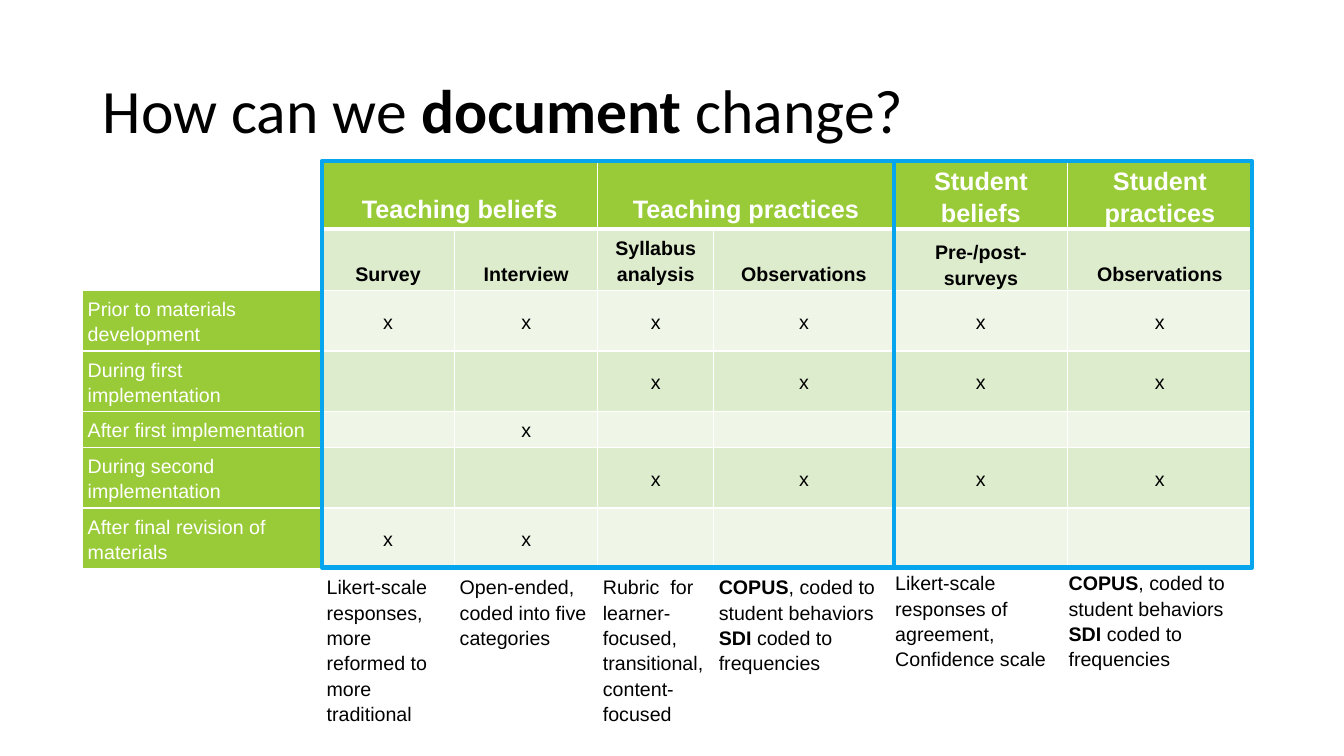
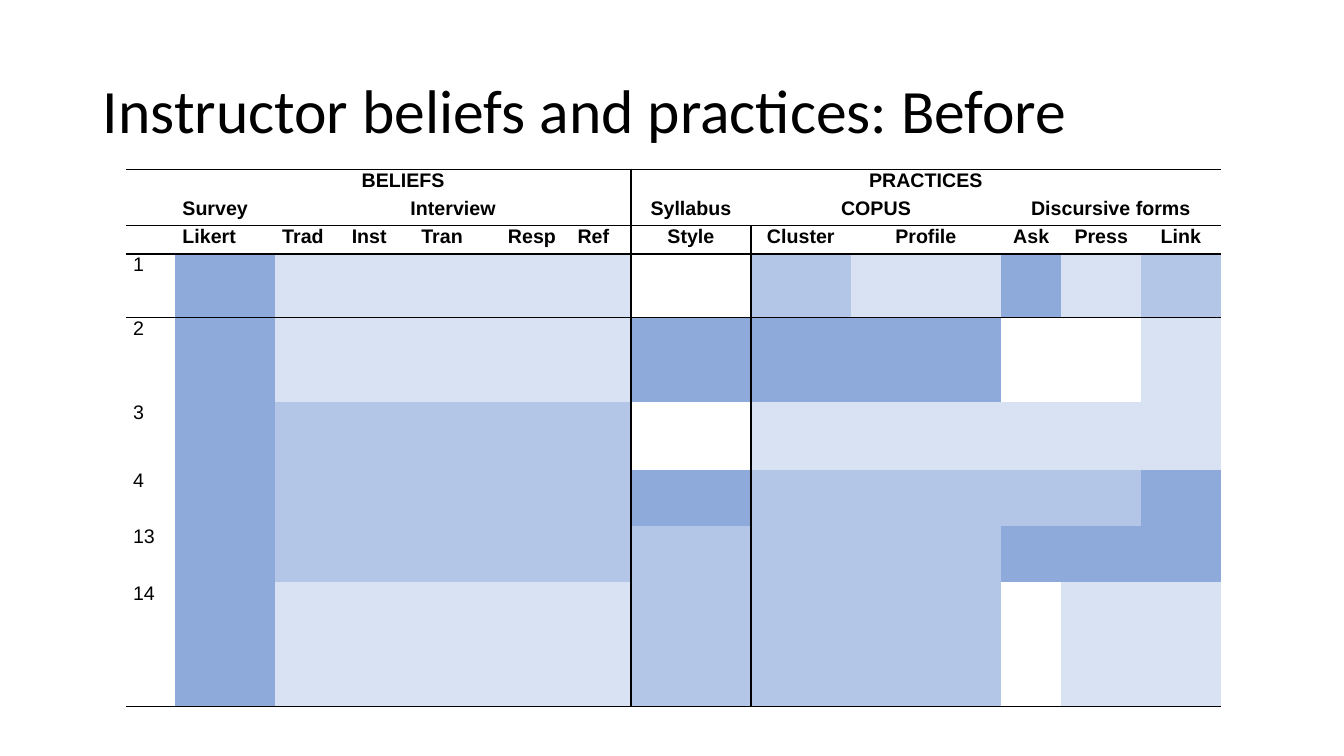
from dataclasses import dataclass, field

from lxml import etree
from pptx import Presentation
from pptx import util as u
from pptx.dml.color import RGBColor
from pptx.enum import shapes, text
from pptx.oxml.ns import qn

WIDTH, HEIGHT = 13.33, 7.5
COLORS = {
    "black": "000000", "white": "FFFFFF", "green": "99CB38", "sage": "DEECCE",
    "mint": "EFF6E8", "outline": "08A5EF", "D": "8EAADB", "M": "B4C6E7", "L": "D9E2F3",
}
NO_STYLE = "{2D5ABB26-0587-4C30-8999-92F81FD0307C}"
LEFT, CENTER = text.PP_ALIGN.LEFT, text.PP_ALIGN.CENTER
TOP, MIDDLE, BOTTOM = text.MSO_ANCHOR.TOP, text.MSO_ANCHOR.MIDDLE, text.MSO_ANCHOR.BOTTOM


@dataclass(frozen=True)
class Grid:
    left: float
    top: float
    cols: tuple[float, ...]
    rows: tuple[float, ...]

    def box(self, c0: int, c1: int, r0: int, r1: int) -> list[u.Emu]:
        lengths = (self.left + sum(self.cols[:c0]), self.top + sum(self.rows[:r0]),
                   sum(self.cols[c0:c1]), sum(self.rows[r0:r1]))
        return [u.Inches(v) for v in lengths]


@dataclass(frozen=True)
class Cell:
    content: str = ""
    fill: str | None = None
    color: str = "black"
    size: int = 14
    bold: bool = False
    align: text.PP_ALIGN = CENTER
    anchor: text.MSO_ANCHOR = TOP
    inset: tuple[float, float] = (0.07, 0)
    spacing: float = 1.0
    span: int = 1
    edge: str = "black"
    edges: dict[str, float] = field(default_factory=dict)


DOCUMENT_GRID = Grid(0.82, 1.6, (2.37, 1.32, 1.42, 1.15, 1.79, 1.72, 1.83),
                     (0.67, 0.61, 0.6, 0.6, 0.35, 0.6, 0.6, 1.74))
CODED = "**COPUS**, coded to student behaviors\n**SDI** coded to frequencies"
DOCUMENT_TEXT = [
    ["", "Teaching beliefs", "", "Teaching practices", "", "Student beliefs", "Student practices"],
    ["", "Survey", "Interview", "Syllabus analysis", "Observations", "Pre-/post- surveys",
     "Observations"],
    ["Prior to materials development", *"xxxxxx"],
    ["During first implementation", "", "", *"xxxx"],
    ["After first implementation", "", "x", "", "", "", ""],
    ["During second implementation", "", "", *"xxxx"],
    ["After final revision of materials", "x", "x", "", "", "", ""],
    ["", "Likert-scale responses, more reformed to more traditional",
     "Open-ended, coded into five categories",
     "Rubric  for learner-focused, transitional, content-focused", CODED,
     "Likert-scale responses of agreement,\nConfidence scale", CODED],
]

BEFORE_GRID = Grid(1.25, 1.68, (0.49, 0.99, 0.69, 0.69, 0.17, 0.69, 0.69, 0.6,
                                1.19, 0.99, 1.49, 0.6, 0.79, 0.79),
                   (0.28, 0.28, 0.28, 0.63, 0.84, 0.67, 0.56, 0.56, 1.23))
BEFORE_HEADS = [
    {1: "BELIEFS", 8: "PRACTICES"},
    {1: "Survey", 2: "Interview", 8: "Syllabus", 9: "COPUS", 11: "Discursive forms"},
    {1: "Likert", 2: "Trad", 3: "Inst", 4: "Tran", 6: "Resp", 7: "Ref", 8: "Style",
     9: "Cluster", 10: "Profile", 11: "Ask", 12: "Press", 13: "Link"},
]
BEFORE_SPANS = {(0, 1): 7, (0, 8): 6, (1, 2): 6, (1, 9): 2, (1, 11): 3, (2, 4): 2}
INSTRUCTORS = {
    "1": ".DLLLLLL.MLDLM",
    "2": ".DLLLLLLDDD..L",
    "3": ".DMMMMMM.LLLLL",
    "4": ".DMMMMMMDMMMMD",
    "13": ".DMMMMMMMMMDDD",
    "14": ".DLLLLLLMMM.LL",
}


def rgb(name: str) -> RGBColor:
    return RGBColor.from_string(COLORS[name])


def assign(target, formats: dict) -> None:
    for name, value in formats.items():
        setattr(target, name, value)


def write(tf, content: str, size: int, font: str, color: str, bold: bool,
          align: text.PP_ALIGN, spacing: float) -> None:
    for i, line in enumerate(content.split("\n")):
        p = tf.add_paragraph() if i else tf.paragraphs[0]
        assign(p, {"alignment": align, "line_spacing": spacing})
        for j, part in enumerate(line.split("**")):
            if part:
                r = p.add_run()
                r.text = part
                assign(r.font, {"size": u.Pt(size), "name": font, "bold": bold or j % 2 == 1})
                r.font.color.rgb = rgb(color)
        if not line:
            etree.SubElement(p._p, qn("a:endParaRPr"), sz=str(size * 100))


def draw_edges(cell, edges: dict[str, float], color: str) -> None:
    tc_pr = cell._tc.get_or_add_tcPr()
    for side in "LRTB":
        if side in edges:
            ln = etree.SubElement(tc_pr, qn(f"a:ln{side}"), w=str(u.Pt(edges[side])))
            fill = etree.SubElement(ln, qn("a:solidFill"))
            etree.SubElement(fill, qn("a:srgbClr"), val=COLORS[color])


def draw_cell(tbl, row: int, col: int, cell: Cell) -> None:
    tc = tbl.cell(row, col)
    if cell.span > 1:
        tc.merge(tbl.cell(row, col + cell.span - 1))
    x, y = map(u.Inches, cell.inset)
    assign(tc, {"margin_left": x, "margin_right": x, "margin_top": y, "margin_bottom": y,
                "vertical_anchor": cell.anchor})
    draw_edges(tc, cell.edges, cell.edge)
    if cell.fill:
        tc.fill.solid()
        tc.fill.fore_color.rgb = rgb(cell.fill)
    else:
        tc.fill.background()
    write(tc.text_frame, cell.content, cell.size, "Arial", cell.color, cell.bold,
          cell.align, cell.spacing)


def draw_table(s, grid: Grid, make_cell) -> None:
    n_rows, n_cols = len(grid.rows), len(grid.cols)
    tbl = s.shapes.add_table(n_rows, n_cols, *grid.box(0, n_cols, 0, n_rows)).table
    assign(tbl, {"first_row": False, "horz_banding": False})
    tbl._tbl.tblPr.find(qn("a:tableStyleId")).text = NO_STYLE
    for col, width in zip(tbl.columns, grid.cols):
        col.width = u.Inches(width)
    for row, height in zip(tbl.rows, grid.rows):
        row.height = u.Inches(height)
    for r in range(n_rows):
        for c in range(n_cols):
            draw_cell(tbl, r, c, make_cell(r, c))


def document_cell(r: int, c: int) -> Cell:
    last = len(DOCUMENT_GRID.rows) - 1
    head, label, note = r == 0 and c > 0, c == 0 and 2 <= r < last, r == last
    if head or label:
        fill = "green"
    elif c == 0 or note:
        fill = "white"
    else:
        fill = "sage" if r % 2 else "mint"
    tight = c == 5 or (c == 6 and r in (0, last))
    return Cell(
        DOCUMENT_TEXT[r][c], fill, "white" if head or label else "black",
        18 if head else 14, r < 2, LEFT if label or note else CENTER,
        BOTTOM if r < 2 else TOP if note else MIDDLE,
        (0.01, 0.01) if tight else (0.05, 0.05), 1.15,
        2 if r == 0 and c in (1, 3) else 1, "white",
        {"L": 1, "R": 1, "T": 3 if r == 1 else 1, "B": 3 if r == 0 else 1})


def before_cell(r: int, c: int) -> Cell:
    heads = len(BEFORE_HEADS)
    last = len(BEFORE_GRID.rows) - 1
    body = r >= heads
    span = BEFORE_SPANS.get((r, c), 2 if body and c == 3 else 1)
    rules = {"L": c == 8, "R": c + span == 8, "T": r in (0, 2, 3), "B": r in (1, 2, last)}
    edges = {side: 1 for side, shown in rules.items() if shown}
    if body:
        name, levels = list(INSTRUCTORS.items())[r - heads]
        fill = None if levels[c] == "." else levels[c]
        return Cell("" if c else name, fill, align=LEFT, span=span, edges=edges)
    flush = (r == 1 and c == 1) or (r == 2 and c < 8)
    return Cell(BEFORE_HEADS[r].get(c, ""), bold=True, align=LEFT if flush else CENTER,
                span=span, edges=edges)


def draw_outline(s, grid: Grid, c0: int, c1: int) -> None:
    sp = s.shapes.add_shape(shapes.MSO_SHAPE.RECTANGLE, *grid.box(c0, c1, 0, 7))
    sp.shadow.inherit = False
    sp.fill.background()
    sp.line.color.rgb = rgb("outline")
    sp.line.width = u.Pt(3)


def add_slide(prs, title: str):
    s = prs.slides.add_slide(prs.slide_layouts[5])
    sp = s.shapes.title
    assign(sp, {"left": u.Inches(0.92), "top": u.Inches(0.4),
                "width": u.Inches(11.5), "height": u.Inches(1.45)})
    tf = sp.text_frame
    assign(tf, {"word_wrap": True, "auto_size": text.MSO_AUTO_SIZE.NONE,
                "vertical_anchor": MIDDLE})
    write(tf, title, 44, "Calibri", "black", False, LEFT, 0.9)
    return s


def main() -> None:
    prs = Presentation()
    assign(prs, {"slide_width": u.Inches(WIDTH), "slide_height": u.Inches(HEIGHT)})

    s = add_slide(prs, "How can we **document** change?")
    draw_table(s, DOCUMENT_GRID, document_cell)
    for c0, c1 in ((1, 5), (5, 7)):
        draw_outline(s, DOCUMENT_GRID, c0, c1)

    s = add_slide(prs, "Instructor beliefs and practices: Before")
    draw_table(s, BEFORE_GRID, before_cell)

    prs.save("out.pptx")


if __name__ == "__main__":
    main()
